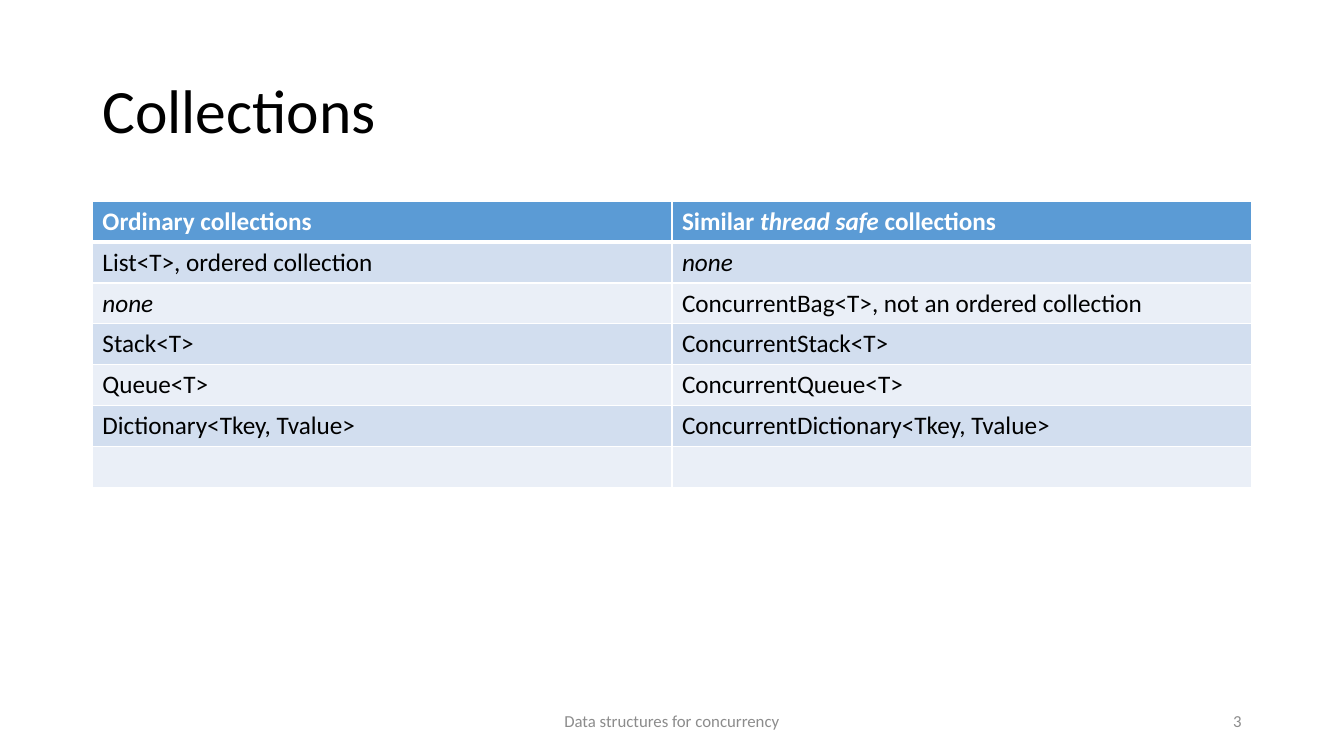
from lxml import etree
from pptx import Presentation
from pptx.dml.color import RGBColor
from pptx.enum import text
from pptx.oxml import ns
from pptx.util import Pt

BLACK = RGBColor(0x00, 0x00, 0x00)
WHITE = RGBColor(0xFF, 0xFF, 0xFF)
GREY = RGBColor(0x8C, 0x8C, 0x8C)
HEADER_BLUE = RGBColor(0x5B, 0x9B, 0xD5)
BAND_DARK = RGBColor(0xD2, 0xDE, 0xEF)
BAND_LIGHT = RGBColor(0xEA, 0xEF, 0xF7)


def add_run(paragraph, words, size, color, bold=False, italic=False):
    run = paragraph.add_run()
    run.text = words
    run.font.name = "Calibri"
    run.font.size = Pt(size)
    run.font.color.rgb = color
    run.font.bold = bold
    run.font.italic = italic


def add_border(cell, side, width):
    line = etree.SubElement(cell._tc.get_or_add_tcPr(), ns.qn(f"a:{side}"), w=str(Pt(width)))
    fill = etree.SubElement(line, ns.qn("a:solidFill"))
    etree.SubElement(fill, ns.qn("a:srgbClr"), val=str(WHITE))


prs = Presentation()
prs.slide_width, prs.slide_height = Pt(960), Pt(540)
slide = prs.slides.add_slide(prs.slide_layouts[5])

title = slide.shapes.title
title.left, title.top, title.width, title.height = Pt(66), Pt(28.75), Pt(828), Pt(104.4)
title.text_frame.auto_size = text.MSO_AUTO_SIZE.NONE
title.text_frame.vertical_anchor = text.MSO_ANCHOR.MIDDLE
heading = title.text_frame.paragraphs[0]
heading.alignment = text.PP_ALIGN.LEFT
heading.line_spacing = 0.9
add_run(heading, "Collections", 44, BLACK)

collections = [
    ("Ordinary collections", "Similar *thread safe *collections"),
    ("List<T>, ordered collection", "*none"),
    ("*none", "ConcurrentBag<T>, not an ordered collection"),
    ("Stack<T>", "ConcurrentStack<T>"),
    ("Queue<T>", "ConcurrentQueue<T>"),
    ("Dictionary<Tkey, Tvalue>", "ConcurrentDictionary<Tkey, Tvalue>"),
    ("", ""),
]
comparison = slide.shapes.add_table(
    len(collections), 2, Pt(66), Pt(143.75), Pt(828), Pt(204.4)).table
for row, pair in enumerate(collections):
    comparison.rows[row].height = Pt(29.2)
    is_header = row == 0
    band = HEADER_BLUE if is_header else BAND_DARK if row % 2 else BAND_LIGHT
    for column, entry in enumerate(pair):
        cell = comparison.cell(row, column)
        add_border(cell, "lnL", 1)
        add_border(cell, "lnR", 1)
        add_border(cell, "lnT", 3 if row == 1 else 1)
        add_border(cell, "lnB", 3 if is_header else 1)
        cell.fill.solid()
        cell.fill.fore_color.rgb = band
        for part, words in enumerate(entry.split("*")):
            if words:
                add_run(cell.text_frame.paragraphs[0], words, 18,
                        WHITE if is_header else BLACK, is_header, part % 2 == 1)

footers = [
    ("Data structures for concurrency", 318, 324, text.PP_ALIGN.CENTER),
    ("3", 678, 216, text.PP_ALIGN.RIGHT),
]
for words, left, width, alignment in footers:
    footer = slide.shapes.add_textbox(Pt(left), Pt(500.5), Pt(width), Pt(28.75)).text_frame
    footer.word_wrap = True
    footer.vertical_anchor = text.MSO_ANCHOR.MIDDLE
    footer.paragraphs[0].alignment = alignment
    add_run(footer.paragraphs[0], words, 12, GREY)

prs.save("out.pptx")
